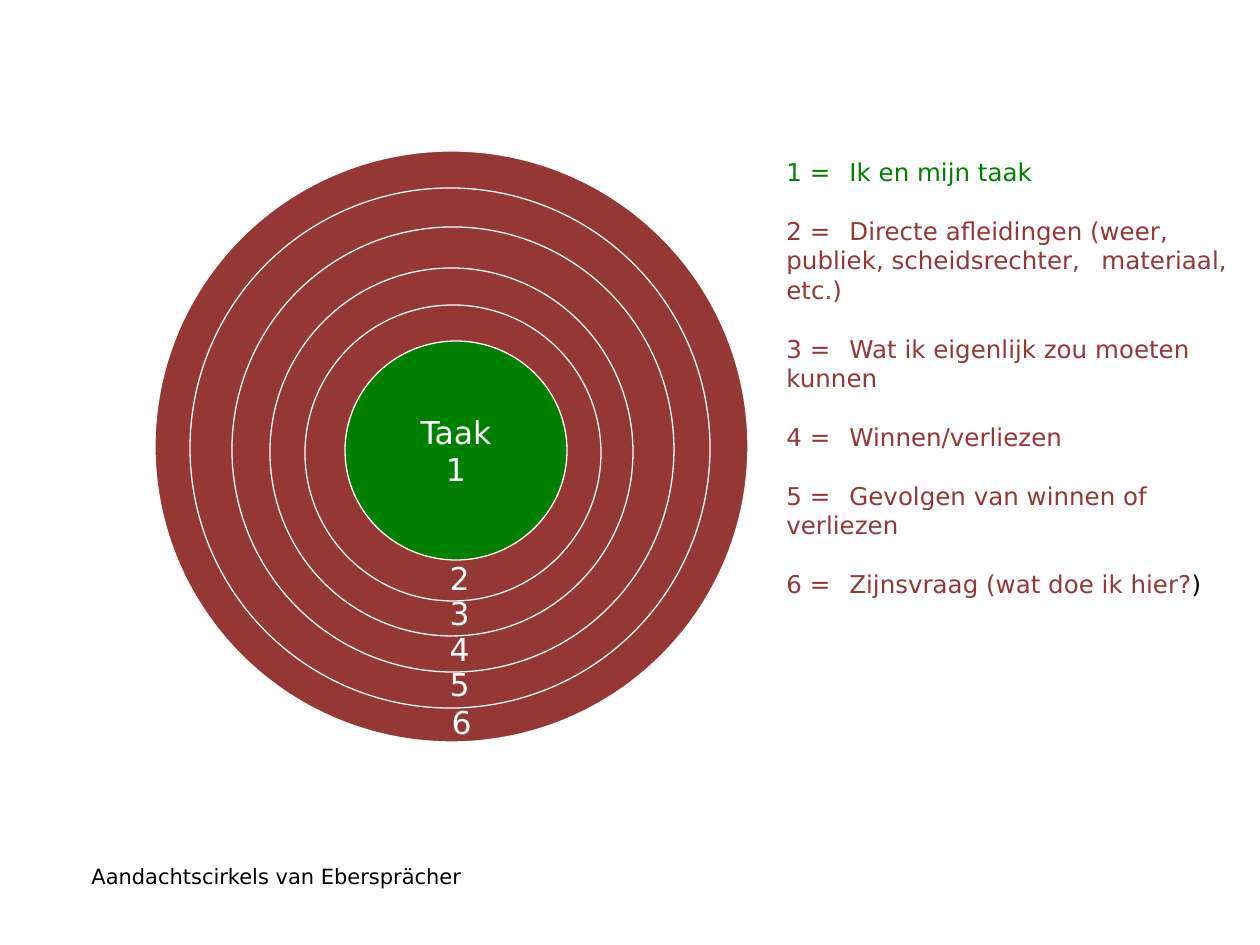
from pptx import Presentation, util as u
from pptx.dml.color import RGBColor
from pptx.enum import shapes, text
from lxml import etree

PX = 914400 / 126
FONT = "DejaVu Sans"
RED, GREEN, WHITE, BLACK = "953735", "008000", "FFFFFF", "000000"
A = "{http://schemas.openxmlformats.org/drawingml/2006/main}"


def px(*lengths):
    return [u.Emu(round(n * PX)) for n in lengths]


def add_text(paragraph, words, size=14, color=BLACK, align=None):
    run = paragraph.add_run()
    run.text = words
    run.font.name = FONT
    run.font.size = u.Pt(size)
    run.font.color.rgb = RGBColor.from_string(color)
    if align is not None:
        paragraph.alignment = align


prs = Presentation()
prs.slide_width, prs.slide_height = px(1260, 945)
slide = prs.slides.add_slide(prs.slide_layouts[6])
CENTER = text.PP_ALIGN.CENTER

# Attention circles, from the outside in
circles = [
    (155, 151, 593, 591, RED),
    (190, 188, 520, 520, RED),
    (232, 227, 442, 445, RED),
    (270, 268, 363, 368, RED),
    (305, 305, 296, 296, RED),
    (345, 341, 222, 219, GREEN),
]
for *box, color in circles:
    circle = slide.shapes.add_shape(shapes.MSO_SHAPE.OVAL, *px(*box))
    circle.shadow.inherit = False
    circle.fill.solid()
    circle.fill.fore_color.rgb = RGBColor.from_string(color)
    circle.line.color.rgb = RGBColor.from_string(WHITE)
    circle.line.width = u.Pt(0.75)

# Core task, in the innermost circle
core = circle.text_frame
core.vertical_anchor = text.MSO_ANCHOR.MIDDLE
add_text(core.paragraphs[0], "Taak", size=18, color=WHITE, align=CENTER)
add_text(core.add_paragraph(), "1", size=18, color=WHITE, align=CENTER)

# Ring numbers
for number, left, top in [("2", 426, 553), ("3", 426, 588), ("4", 426, 624),
                          ("5", 426, 659), ("6", 428, 697)]:
    ring = slide.shapes.add_textbox(*px(left, top, 67, 50)).text_frame
    ring.word_wrap = True
    add_text(ring.paragraphs[0], number, size=18, color=WHITE, align=CENTER)

# Legend, with a tab stop every half inch
legend = slide.shapes.add_textbox(*px(774, 151, 486, 459)).text_frame
legend.word_wrap = True
meanings = [
    "Ik en mijn taak",
    "Directe afleidingen (weer, \tpubliek, scheidsrechter, \tmateriaal, etc.)",
    "Wat ik eigenlijk zou moeten \tkunnen",
    "Winnen/verliezen",
    "Gevolgen van winnen of \tverliezen",
    "Zijnsvraag (wat doe ik hier?",
]
for number, meaning in enumerate(meanings, 1):
    entry = legend.paragraphs[0] if number == 1 else legend.add_paragraph()
    if number > 1:
        entry.space_before = u.Pt(16.8)
    add_text(entry, f"{number} =\t{meaning}", color=GREEN if number == 1 else RED)
    tabs = etree.SubElement(entry._p.get_or_add_pPr(), A + "tabLst")
    for stop in range(1, 8):
        etree.SubElement(tabs, A + "tab", pos=str(px(63 * stop)[0]), algn="l")
add_text(entry, ")")

# Caption
caption = slide.shapes.add_textbox(*px(79, 857, 412, 38)).text_frame
caption.word_wrap = True
add_text(caption.paragraphs[0], "Aandachtscirkels van Ebersprächer", size=12)

prs.save("out.pptx")
